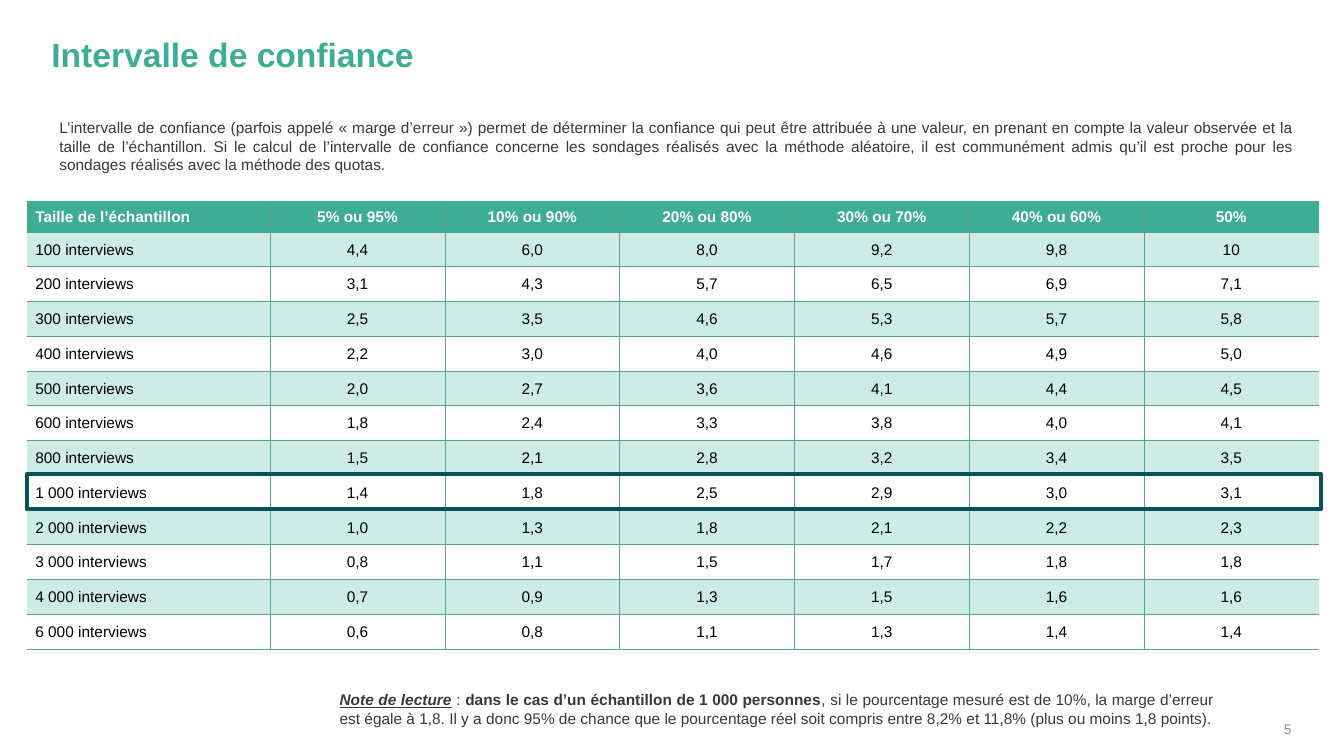
from lxml import etree
from pptx import Presentation
from pptx import util as u
from pptx.dml.color import RGBColor
from pptx.enum import shapes, text
from pptx.oxml import ns

GREEN = RGBColor(0x3E, 0xAD, 0x95)
PALE_GREEN = RGBColor(0xCC, 0xEC, 0xE5)
GRID_GREEN = RGBColor(0x58, 0xA2, 0x91)
DARK_TEAL = RGBColor(0x0B, 0x52, 0x58)
WHITE = RGBColor(0xFF, 0xFF, 0xFF)
BLACK = RGBColor(0, 0, 0)
TEXT_GREY = RGBColor(0x3B, 0x38, 0x38)
PAGE_GREY = RGBColor(0x8C, 0x94, 0x91)

deck = Presentation()
deck.slide_width, deck.slide_height = u.Inches(13.33), u.Inches(7.5)
slide = deck.slides.add_slide(deck.slide_layouts[6])


def add_run(paragraph, wording, size, color, bold=False):
    run = paragraph.add_run()
    run.text = wording
    run.font.name = "Arial"
    run.font.size = u.Pt(size)
    run.font.color.rgb = color
    run.font.bold = bold
    return run


def add_text(left, top, width, height, align, anchor, margins=(0.1, 0.05)):
    frame = slide.shapes.add_textbox(*map(u.Inches, (left, top, width, height))).text_frame
    frame.word_wrap = True
    frame.vertical_anchor = anchor
    frame.margin_left = frame.margin_right = u.Inches(margins[0])
    frame.margin_top = frame.margin_bottom = u.Inches(margins[1])
    frame.paragraphs[0].alignment = align
    return frame.paragraphs[0]


# Title
title = add_text(0.51, 0.38, 12.31, 0.36, text.PP_ALIGN.LEFT, text.MSO_ANCHOR.TOP, (0, 0))
title.line_spacing = 0.9
add_run(title, "Intervalle de confiance", 24, GREEN, True)

# Page number
page = add_text(12.22, 7.07, 0.59, 0.24, text.PP_ALIGN.RIGHT, text.MSO_ANCHOR.BOTTOM, (0, 0))
add_run(page, "5", 10, PAGE_GREY)

# Reading note
note = add_text(3.27, 6.8, 8.87, 0.47, text.PP_ALIGN.JUSTIFY, text.MSO_ANCHOR.MIDDLE)
note_label = add_run(note, "Note de lecture", 11, TEXT_GREY, True)
note_label.font.italic = note_label.font.underline = True
add_run(note, " : ", 11, TEXT_GREY)
add_run(note, "dans le cas d’un échantillon de 1 000 personnes", 11, TEXT_GREY, True)
add_run(note, ", si le pourcentage mesuré est de 10%, la marge d’erreur est égale à 1,8. "
        "Il y a donc 95% de chance que le pourcentage réel soit compris entre 8,2% et 11,8% "
        "(plus ou moins 1,8 points).", 11, TEXT_GREY)

# Margin of error by sample size
margins_of_error = [
    ("Taille de l’échantillon", "5% ou 95%", "10% ou 90%", "20% ou 80%", "30% ou 70%",
     "40% ou 60%", "50%"),
    ("100 interviews", "4,4", "6,0", "8,0", "9,2", "9,8", "10"),
    ("200 interviews", "3,1", "4,3", "5,7", "6,5", "6,9", "7,1"),
    ("300 interviews", "2,5", "3,5", "4,6", "5,3", "5,7", "5,8"),
    ("400 interviews", "2,2", "3,0", "4,0", "4,6", "4,9", "5,0"),
    ("500 interviews", "2,0", "2,7", "3,6", "4,1", "4,4", "4,5"),
    ("600 interviews", "1,8", "2,4", "3,3", "3,8", "4,0", "4,1"),
    ("800 interviews", "1,5", "2,1", "2,8", "3,2", "3,4", "3,5"),
    ("1 000 interviews", "1,4", "1,8", "2,5", "2,9", "3,0", "3,1"),
    ("2 000 interviews", "1,0", "1,3", "1,8", "2,1", "2,2", "2,3"),
    ("3 000 interviews", "0,8", "1,1", "1,5", "1,7", "1,8", "1,8"),
    ("4 000 interviews", "0,7", "0,9", "1,3", "1,5", "1,6", "1,6"),
    ("6 000 interviews", "0,6", "0,8", "1,1", "1,3", "1,4", "1,4"),
]
row_count, column_count = len(margins_of_error), len(margins_of_error[0])
table = slide.shapes.add_table(row_count, column_count, u.Inches(0.27), u.Inches(1.99),
                               u.Inches(12.81), u.Inches(4.45)).table
for c, column in enumerate(table.columns):
    column.width = u.Inches(2.41 if c == 0 else (12.81 - 2.41) / (column_count - 1))

for r, values in enumerate(margins_of_error):
    table.rows[r].height = u.Inches(0.31 if r == 0 else (4.45 - 0.31) / (row_count - 1))
    row_fill = GREEN if r == 0 else PALE_GREEN if r % 2 else WHITE
    for c, value in enumerate(values):
        cell = table.cell(r, c)
        cell.vertical_anchor = text.MSO_ANCHOR.MIDDLE
        cell.margin_left = u.Inches(0.08 if c == 0 else 0.01)
        cell.margin_right = cell.margin_top = u.Inches(0.01)
        cell.margin_bottom = 0
        entry = cell.text_frame.paragraphs[0]
        entry.alignment = text.PP_ALIGN.CENTER if c else text.PP_ALIGN.LEFT
        add_run(entry, value, 11, BLACK if r else WHITE, r == 0)

        # Grid lines, open at the left, right and top edges
        cell_properties = cell._tc.get_or_add_tcPr()
        drawn = {"lnL": c > 0, "lnR": c < column_count - 1, "lnT": r > 0, "lnB": True}
        for side, visible in drawn.items():
            border = etree.SubElement(cell_properties, ns.qn(f"a:{side}"), w=str(u.Pt(0.5)))
            if visible:
                stroke = etree.SubElement(border, ns.qn("a:solidFill"))
                etree.SubElement(stroke, ns.qn("a:srgbClr"), val=str(GRID_GREEN))
            else:
                etree.SubElement(border, ns.qn("a:noFill"))
        cell.fill.solid()
        cell.fill.fore_color.rgb = row_fill

# Introduction
intro = add_text(0.49, 1, 12.45, 0.9, text.PP_ALIGN.JUSTIFY, text.MSO_ANCHOR.MIDDLE)
add_run(intro, "L’intervalle de confiance (parfois appelé « marge d’erreur ») permet de déterminer "
        "la confiance qui peut être attribuée à une valeur, en prenant en compte la valeur "
        "observée et la taille de l’échantillon. Si le calcul de l’intervalle de confiance "
        "concerne les sondages réalisés avec la méthode aléatoire, il est communément admis "
        "qu’il est proche pour les sondages réalisés avec la méthode des quotas.",
        11, TEXT_GREY)

# Frame around the 1 000 interviews row
highlight = slide.shapes.add_shape(shapes.MSO_SHAPE.RECTANGLE, u.Inches(0.27), u.Inches(4.7),
                                   u.Inches(12.83), u.Inches(0.35))
highlight.shadow.inherit = False
highlight.fill.background()
highlight.line.color.rgb = DARK_TEAL
highlight.line.width = u.Pt(3)

deck.save("out.pptx")
